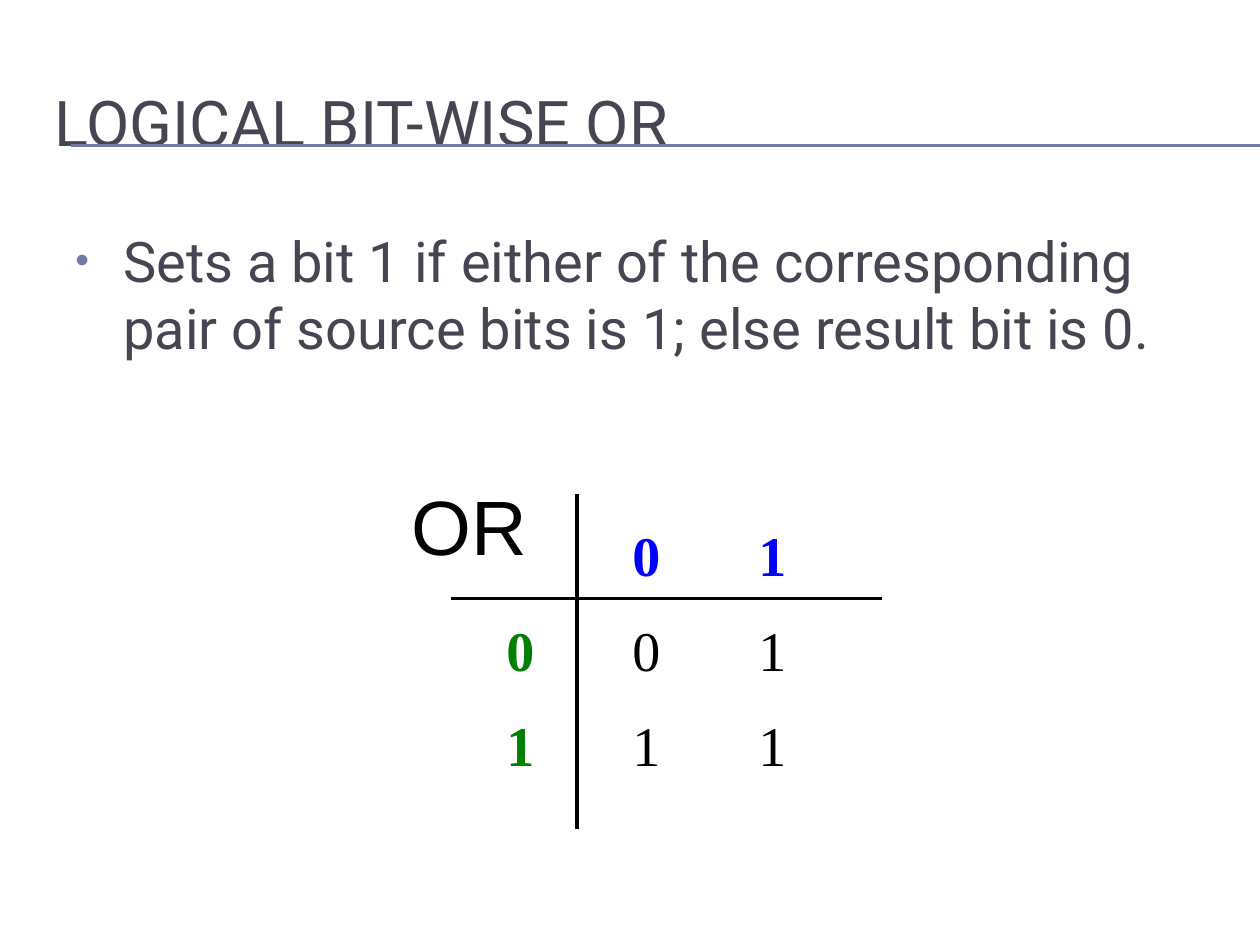
from dataclasses import dataclass

from lxml.etree import SubElement
from pptx import Presentation
from pptx.dml.color import RGBColor as RGB
from pptx.enum.shapes import MSO_CONNECTOR as Connector
from pptx.enum.text import MSO_ANCHOR as Anchor, MSO_AUTO_SIZE as AutoSize, PP_ALIGN as Align
from pptx.oxml.ns import qn
from pptx.util import Inches, Pt


@dataclass(frozen=True)
class Theme:
    ink: RGB = RGB.from_string("464653")
    accent: RGB = RGB.from_string("727CA3")
    black: RGB = RGB.from_string("000000")
    column_head: RGB = RGB.from_string("0000FF")
    row_head: RGB = RGB.from_string("008000")
    sans: str = "Roboto"
    serif: str = "Times New Roman"
    label: str = "Arial"
    title_size: int = 36
    text_size: int = 32
    label_size: int = 44


@dataclass(frozen=True)
class Rule:
    start: tuple[float, float]
    end: tuple[float, float]
    color: RGB
    width: float


@dataclass(frozen=True)
class Part:
    text: str
    color: RGB
    bold: bool = False


T = Theme()

TITLE_RULES = [Rule((0.56, y), (10, y), T.accent, 0.75) for y in (1.15, 1.16)]
TABLE_RULES = [
    Rule((3.58, 4.75), (7, 4.75), T.black, 2),
    Rule((4.58, 6.58), (4.58, 3.92), T.black, 2),
]
TRUTH_ROWS = [
    [Part("\t", T.black), Part("0\t1", T.column_head, True)],
    [Part("0", T.row_head, True), Part("\t0\t1", T.black)],
    [Part("1", T.row_head, True), Part("\t1\t1", T.black)],
]


def draw_rule(slide, rule: Rule) -> None:
    ends = [Inches(v) for v in (*rule.start, *rule.end)]
    line = slide.shapes.add_connector(Connector.STRAIGHT, *ends)
    line.line.color.rgb = rule.color
    line.line.width = Pt(rule.width)
    SubElement(line._element.spPr, qn("a:effectLst"))


def style_run(r, font: str, size: int, color: RGB, bold: bool = False) -> None:
    r.font.name, r.font.size, r.font.bold = font, Pt(size), bold
    r.font.color.rgb = color


def space_before(p, percent: int) -> None:
    spacing = SubElement(p._p.get_or_add_pPr(), qn("a:spcBef"))
    SubElement(spacing, qn("a:spcPct"), val=str(percent * 1000))


def add_bullet(p, indent: float) -> None:
    pPr = p._p.get_or_add_pPr()
    pPr.set("marL", str(Inches(indent)))
    pPr.set("indent", str(-Inches(indent)))
    color = SubElement(pPr, qn("a:buClr"))
    SubElement(color, qn("a:srgbClr"), val=str(T.accent))
    SubElement(pPr, qn("a:buSzPct"), val="70000")
    SubElement(pPr, qn("a:buFont"), typeface=T.label)
    SubElement(pPr, qn("a:buChar"), char="•")


def add_tabs(p, stops: list[float]) -> None:
    tabs = SubElement(p._p.get_or_add_pPr(), qn("a:tabLst"))
    for stop in stops:
        SubElement(tabs, qn("a:tab"), pos=str(Inches(stop)), algn="l")


def add_text_frame(slide, left: float, top: float, width: float, height: float):
    sp = slide.shapes.add_textbox(*map(Inches, (left, top, width, height)))
    tf = sp.text_frame
    tf.word_wrap = True
    return tf


def set_title(slide, text: str) -> None:
    sp = slide.shapes.title
    sp.left, sp.top, sp.width, sp.height = map(Inches, (0.33, 0.5, 9.5, 0.92))
    tf = sp.text_frame
    tf.text = text
    tf.auto_size = AutoSize.NONE
    tf.vertical_anchor = Anchor.MIDDLE
    p = tf.paragraphs[0]
    p.alignment = Align.LEFT
    style_run(p.runs[0], T.sans, T.title_size, T.ink)


def main() -> None:
    prs = Presentation()
    prs.slide_width, prs.slide_height = Inches(10), Inches(7.5)
    slide = prs.slides.add_slide(prs.slide_layouts[5])

    # Title and its underline
    for rule in TITLE_RULES:
        draw_rule(slide, rule)
    set_title(slide, "LOGICAL BIT-WISE OR")

    # Definition
    p = add_text_frame(slide, 0.5, 1.75, 9, 2.11).paragraphs[0]
    p.text = ("Sets a bit 1 if either of the corresponding pair of source bits is 1; "
              "else result bit is 0.")
    space_before(p, 20)
    add_bullet(p, 0.38)
    style_run(p.runs[0], T.sans, T.text_size, T.ink)

    # Truth table: tabbed values, crossing rules and operator label
    tf = add_text_frame(slide, 3.92, 4.08, 2.75, 2.23)
    for i, row in enumerate(TRUTH_ROWS):
        p = tf.add_paragraph() if i else tf.paragraphs[0]
        space_before(p, 50)
        add_tabs(p, [1, 2])
        for part in row:
            r = p.add_run()
            r.text = part.text
            style_run(r, T.serif, T.text_size, part.color, part.bold)
    for rule in TABLE_RULES:
        draw_rule(slide, rule)
    p = add_text_frame(slide, 3.17, 3.75, 1.25, 0.83).paragraphs[0]
    p.text = "OR"
    space_before(p, 50)
    style_run(p.runs[0], T.label, T.label_size, T.black)

    prs.save("out.pptx")


if __name__ == "__main__":
    main()
